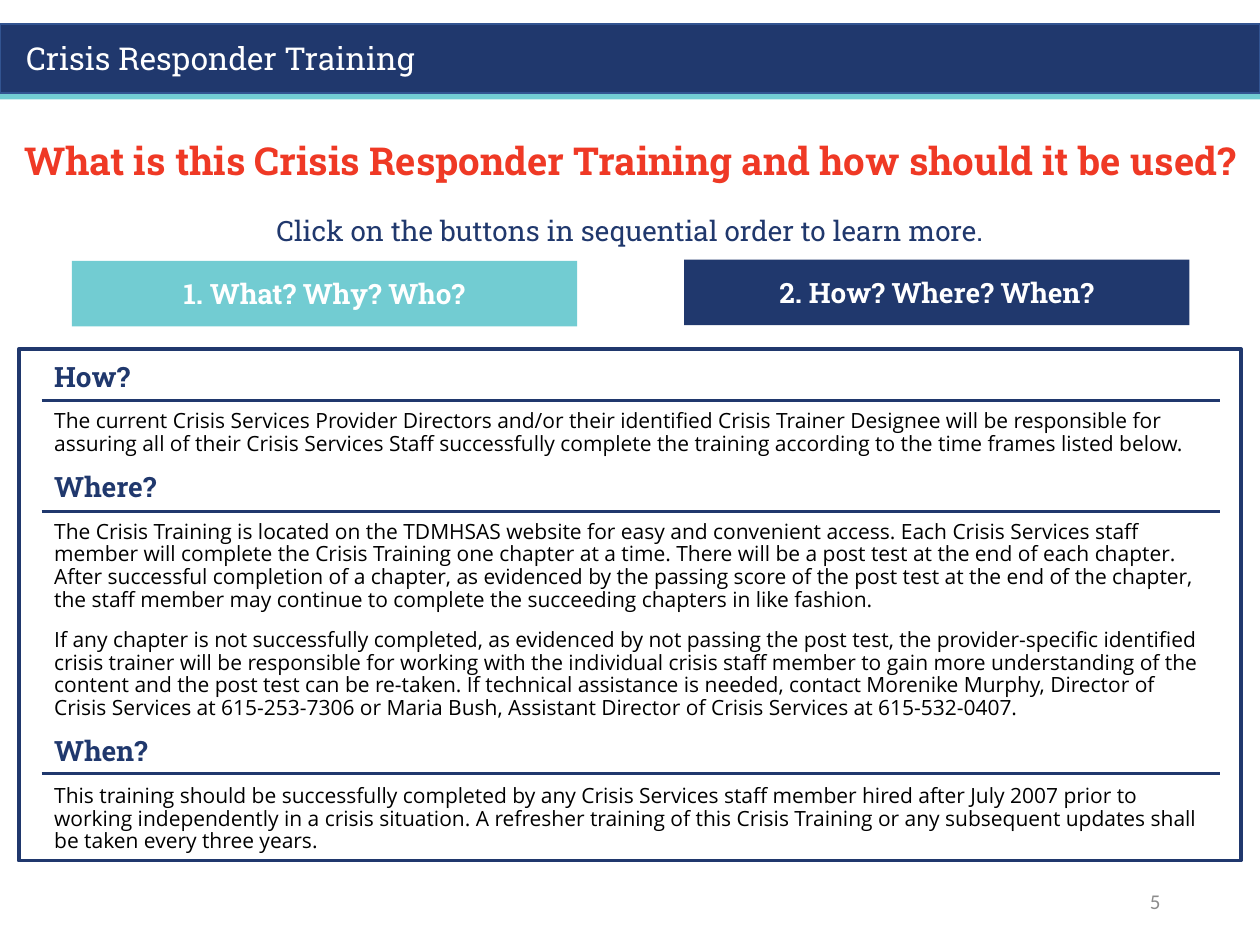
from typing import NamedTuple, Optional

from lxml.etree import SubElement
from pptx import Presentation
from pptx.dml.color import RGBColor
from pptx.enum.shapes import MSO_CONNECTOR as Connector, MSO_SHAPE as Shape
from pptx.enum.text import MSO_ANCHOR as Anchor, MSO_AUTO_SIZE as AutoSize, PP_ALIGN as Align
from pptx.oxml.ns import qn
from pptx.util import Inches, Pt

COLUMNS, ROWS = 100, 75
NAVY, TEAL, RED, WHITE, BLACK, GREY = "20386D", "72CCD2", "EF3925", "FFFFFF", "000000", "8C8C8C"
SLAB, SANS = "Roboto Slab", "Open Sans"

deck = Presentation()
deck.slide_width, deck.slide_height = Inches(10), Inches(7.5)
COLUMN, ROW = deck.slide_width / COLUMNS, deck.slide_height / ROWS


class Area(NamedTuple):
    """A rectangle in grid columns and rows."""
    column: float
    row: float
    columns: float
    rows: float

    def emu(self) -> tuple:
        return (round(self.column * COLUMN), round(self.row * ROW),
                round(self.columns * COLUMN), round(self.rows * ROW))


class Style(NamedTuple):
    font: str
    size: float
    color: str
    bold: bool = False
    align: Align = Align.LEFT
    spacing: float = 1.0
    before: float = 0


class Line(NamedTuple):
    text: str
    style: Style


class Button(NamedTuple):
    label: str
    area: Area
    fill: str


HEADING = Style(SLAB, 16, NAVY, True, spacing=0.9, before=10)
DETAIL = Style(SANS, 12, BLACK, spacing=0.9, before=10)
LABEL = Style(SLAB, 16, WHITE, True, Align.CENTER)

TITLE = [
    Line("What is this Crisis Responder Training and how should it be used?",
         Style(SLAB, 22, RED, True, Align.CENTER, 0.9)),
    Line("Click on the buttons in sequential order to learn more.",
         Style(SLAB, 16, NAVY, False, Align.CENTER, 0.9, 19)),
]
ANSWERS = [
    Line("How?", HEADING),
    Line("The current Crisis Services Provider Directors and/or their identified Crisis Trainer "
         "Designee will be responsible for assuring all of their Crisis Services Staff successfully "
         "complete the training according to the time frames listed below.", DETAIL),
    Line("Where?", HEADING),
    Line("The Crisis Training is located on the TDMHSAS website for easy and convenient access. "
         "Each Crisis Services staff member will complete the Crisis Training one chapter at a time. "
         "There will be a post test at the end of each chapter. After successful completion of a "
         "chapter, as evidenced by the passing score of the post test at the end of the chapter, the "
         "staff member may continue to complete the succeeding chapters in like fashion.", DETAIL),
    Line("If any chapter is not successfully completed, as evidenced by not passing the post test, "
         "the provider-specific identified crisis trainer will be responsible for working with the "
         "individual crisis staff member to gain more understanding of the content and the post test "
         "can be re-taken. If technical assistance is needed, contact Morenike Murphy, Director of "
         "Crisis Services at 615-253-7306 or Maria Bush, Assistant Director of Crisis Services at "
         "615-532-0407.", DETAIL),
    Line("When?", HEADING),
    Line("This training should be successfully completed by any Crisis Services staff member hired "
         "after July 2007 prior to working independently in a crisis situation. A refresher training "
         "of this Crisis Training or any subsequent updates shall be taken every three years.", DETAIL),
]
BUTTONS = [
    Button("1. What? Why? Who?", Area(5.7, 20.7, 40.1, 5.2), TEAL),
    Button("2. How? Where? When?", Area(54.3, 20.6, 40.1, 5.2), NAVY),
]
RULE_ROWS = [31.8, 40.6, 61.4]


def rgb(color: str) -> RGBColor:
    return RGBColor.from_string(color)


def write(frame, lines: list[Line], anchor: Anchor = Anchor.TOP) -> None:
    frame.word_wrap = True
    frame.auto_size = AutoSize.NONE
    frame.vertical_anchor = anchor
    for index, (text, style) in enumerate(lines):
        paragraph = frame.paragraphs[0] if index == 0 else frame.add_paragraph()
        paragraph.text = text
        paragraph.alignment = style.align
        paragraph.line_spacing = style.spacing
        paragraph.space_before = Pt(style.before if index else 0)
        font = paragraph.font
        font.name, font.size, font.bold = style.font, Pt(style.size), style.bold
        font.color.rgb = rgb(style.color)


def place(placeholder, area: Area, lines: list[Line], anchor: Anchor) -> None:
    placeholder.left, placeholder.top, placeholder.width, placeholder.height = area.emu()
    write(placeholder.text_frame, lines, anchor)


def add_text(slide, area: Area, line: Line, anchor: Anchor = Anchor.TOP) -> None:
    write(slide.shapes.add_textbox(*area.emu()).text_frame, [line], anchor)


def add_box(slide, area: Area, fill: Optional[str] = None, outline: Optional[str] = None,
            weight: float = 1):
    box = slide.shapes.add_shape(Shape.RECTANGLE, *area.emu())
    box.shadow.inherit = False
    if fill:
        box.fill.solid()
        box.fill.fore_color.rgb = rgb(fill)
    else:
        box.fill.background()
    if outline:
        box.line.color.rgb = rgb(outline)
        box.line.width = Pt(weight)
    else:
        box.line.fill.background()
    return box


def add_rule(slide, row: float) -> None:
    left, top, width, _ = Area(3.3, row, 93.5, 0).emu()
    rule = slide.shapes.add_connector(Connector.STRAIGHT, left, top, left + width, top)
    rule.line.color.rgb = rgb(NAVY)
    rule.line.width = Pt(1.5)
    SubElement(rule._element.spPr, qn("a:effectLst"))


def remove_bullets(frame) -> None:
    for paragraph in frame.paragraphs:
        properties = paragraph._p.get_or_add_pPr()
        properties.set("marL", "0")
        properties.set("indent", "0")
        properties.insert_element_before(properties.makeelement(qn("a:buNone"), {}),
                                         "a:tabLst", "a:defRPr", "a:extLst")


def build() -> None:
    """Build the training slide and save it."""
    slide = deck.slides.add_slide(deck.slide_layouts[1])
    title, answers = slide.placeholders

    add_box(slide, Area(0, 4.8, COLUMNS, 3.1), TEAL)
    add_box(slide, Area(0, 1.9, COLUMNS, 5.5), NAVY, "325491")
    add_text(slide, Area(1.1, 2.6, 37, 4), Line("Crisis Responder Training", Style(SLAB, 18, WHITE)))
    add_text(slide, Area(70.6, 69.5, 22.5, 4),
             Line("5", Style("Calibri", 12, GREY, align=Align.RIGHT)), Anchor.MIDDLE)

    place(title, Area(0, 10.2, COLUMNS, 10.5), TITLE, Anchor.MIDDLE)
    place(answers, Area(3.3, 28.3, 93.6, 39.9), ANSWERS, Anchor.TOP)
    remove_bullets(answers.text_frame)

    add_box(slide, Area(1.5, 27.7, 97, 40.6), outline=NAVY, weight=2.25)
    for row in RULE_ROWS:
        add_rule(slide, row)
    for button in BUTTONS:
        box = add_box(slide, button.area, button.fill)
        write(box.text_frame, [Line(button.label, LABEL)], Anchor.MIDDLE)

    deck.save("out.pptx")


if __name__ == "__main__":
    build()
